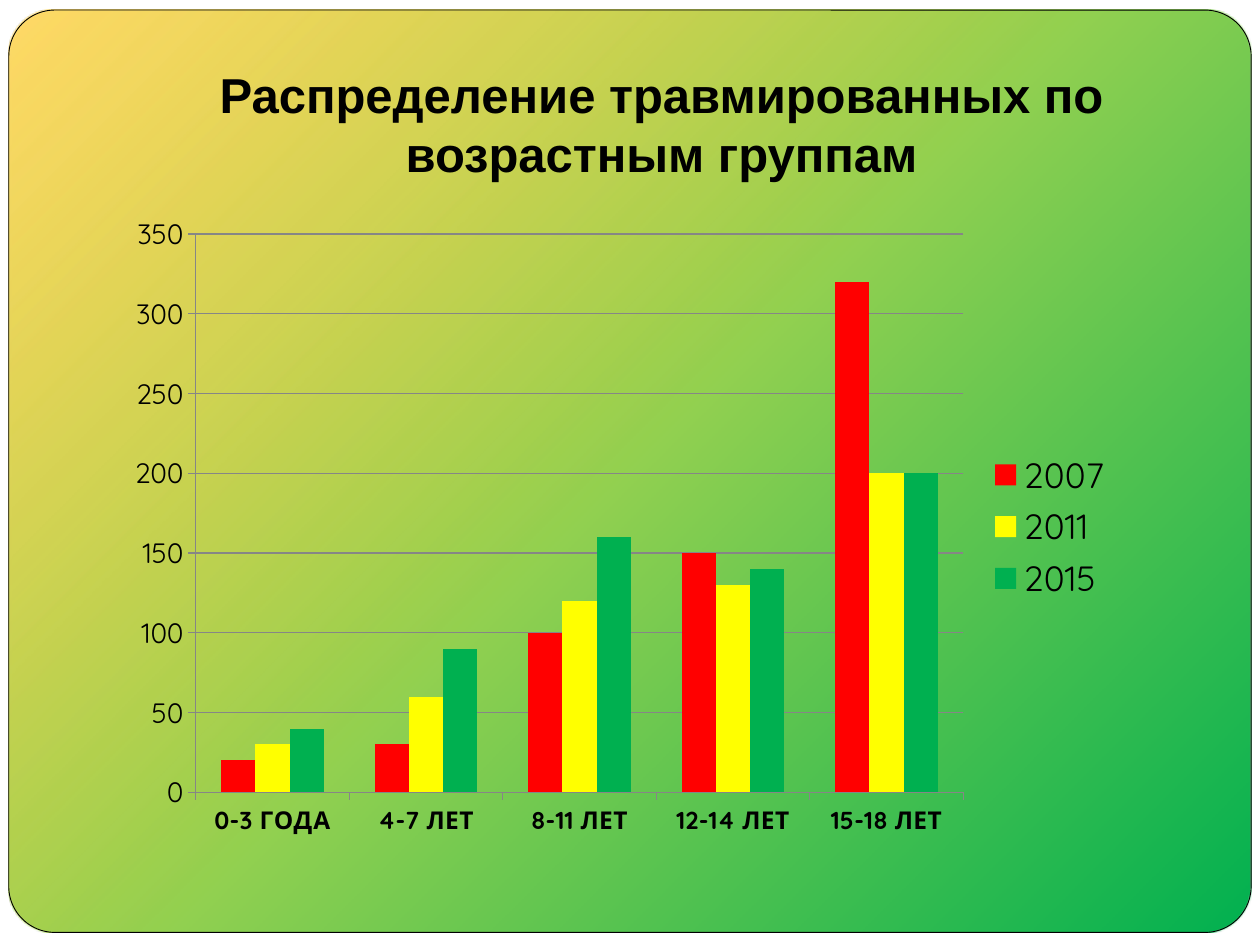
from lxml import etree
from pptx import Presentation
from pptx import util as u
from pptx.chart import data as chart_data
from pptx.dml.color import RGBColor
from pptx.enum import chart as chart_enum, shapes, text
from pptx.oxml.ns import nsdecls, qn

GRADIENT = [(0, "00B050", 100), (50, "92D050", 100), (100, "FFC000", 59)]
AGE_GROUPS = ["0-3 ГОДА", "4-7 ЛЕТ", "8-11 ЛЕТ", "12-14 ЛЕТ", "15-18 ЛЕТ"]
YEARS = [
    ("2007", "FF0000", (20, 30, 100, 150, 320)),
    ("2011", "FFFF00", (30, 60, 120, 130, 200)),
    ("2015", "00B050", (40, 90, 160, 140, 200)),
]


def color(value):
    return RGBColor.from_string(value)


def box(left, top, width, height):
    return [u.Inches(length) for length in (left, top, width, height)]


def format_font(font, size, name="Quicksand", bold=False, fill="000000"):
    font.name, font.size, font.bold = name, u.Pt(size), bold
    font.color.rgb = color(fill)


def write_text(frame, content, align=text.PP_ALIGN.CENTER, **font_format):
    paragraph = frame.paragraphs[0]
    paragraph.alignment = align
    run = paragraph.add_run()
    run.text = content
    format_font(run.font, **font_format)


def set_corner_gradient(properties):
    """Replace a solid fill by a gradient that spreads from the lower right corner."""
    stops = "".join(
        f'<a:gs pos="{position * 1000}"><a:srgbClr val="{value}">'
        f'<a:alpha val="{opacity * 1000}"/></a:srgbClr></a:gs>'
        for position, value, opacity in GRADIENT
    )
    gradient = etree.fromstring(
        f'<a:gradFill {nsdecls("a")} rotWithShape="1"><a:gsLst>{stops}</a:gsLst>'
        '<a:path path="circle"><a:fillToRect l="100000" t="100000"/></a:path></a:gradFill>'
    )
    properties.replace(properties.find(qn("a:solidFill")), gradient)


def add_panel(slide, kind, position, fill="FFFFFF"):
    panel = slide.shapes.add_shape(kind, *box(*position))
    panel.shadow.inherit = False
    panel.fill.solid()
    panel.fill.fore_color.rgb = color(fill)
    panel.line.fill.background()
    return panel


def add_backdrop(slide):
    slide.background.fill.solid()
    set_corner_gradient(slide.element.find(".//" + qn("p:bgPr")))
    add_panel(slide, shapes.MSO_SHAPE.RECTANGLE, (0, 0, 10, 7.5))
    card = add_panel(slide, shapes.MSO_SHAPE.ROUNDED_RECTANGLE, (0.07, 0.08, 9.86, 7.32))
    card.adjustments[0] = 0.05
    card.line.color.rgb = color("000000")
    card.line.width = u.Pt(0.5)
    set_corner_gradient(card.element.spPr)


def format_title(slide, content):
    title = slide.shapes.title
    title.left, title.top, title.width, title.height = box(1, 0.3, 8.5, 1.25)
    frame = title.text_frame
    frame.word_wrap = True
    frame.vertical_anchor = text.MSO_ANCHOR.BOTTOM
    frame.margin_bottom = u.Inches(0.1)
    write_text(frame, content, name="Arial", size=28, bold=True)
    # Bring the title in front of the backdrop
    slide.shapes.element.append(title.element)


def format_axis(axis, size, bold=False):
    format_font(axis.tick_labels.font, size, bold=bold)
    axis.major_tick_mark = chart_enum.XL_TICK_MARK.OUTSIDE
    axis.format.line.color.rgb = color("868686")
    axis.format.line.width = u.Pt(0.75)


def add_age_chart(slide):
    data = chart_data.CategoryChartData()
    data.categories = AGE_GROUPS
    for year, _, values in YEARS:
        data.add_series(year, values)
    chart = slide.shapes.add_chart(
        chart_enum.XL_CHART_TYPE.COLUMN_CLUSTERED, *box(0.91, 1.62, 8.03, 5.12), data
    ).chart
    chart.has_title = False
    format_font(chart.font, 10)

    # Columns
    plot = chart.plots[0]
    plot.gap_width, plot.overlap = 150, 0
    plot.vary_by_categories = False
    for series, (_, fill, _) in zip(plot.series, YEARS):
        series.format.fill.solid()
        series.format.fill.fore_color.rgb = color(fill)

    # Axes and grid
    format_axis(chart.category_axis, 14, bold=True)
    value_axis = chart.value_axis
    format_axis(value_axis, 16)
    value_axis.minimum_scale, value_axis.maximum_scale, value_axis.major_unit = 0, 350, 50
    value_axis.has_major_gridlines = True
    value_axis.major_gridlines.format.line.color.rgb = color("868686")
    value_axis.major_gridlines.format.line.width = u.Pt(0.75)

    # Legend
    chart.has_legend = True
    chart.legend.position = chart_enum.XL_LEGEND_POSITION.RIGHT
    chart.legend.include_in_layout = False
    format_font(chart.legend.font, 20)


def main():
    presentation = Presentation()
    presentation.slide_width, presentation.slide_height = u.Inches(10), u.Inches(7.5)
    slide = presentation.slides.add_slide(presentation.slide_layouts[5])
    add_backdrop(slide)
    format_title(slide, "Распределение травмированных по возрастным группам")
    add_age_chart(slide)
    presentation.save("out.pptx")


if __name__ == "__main__":
    main()
